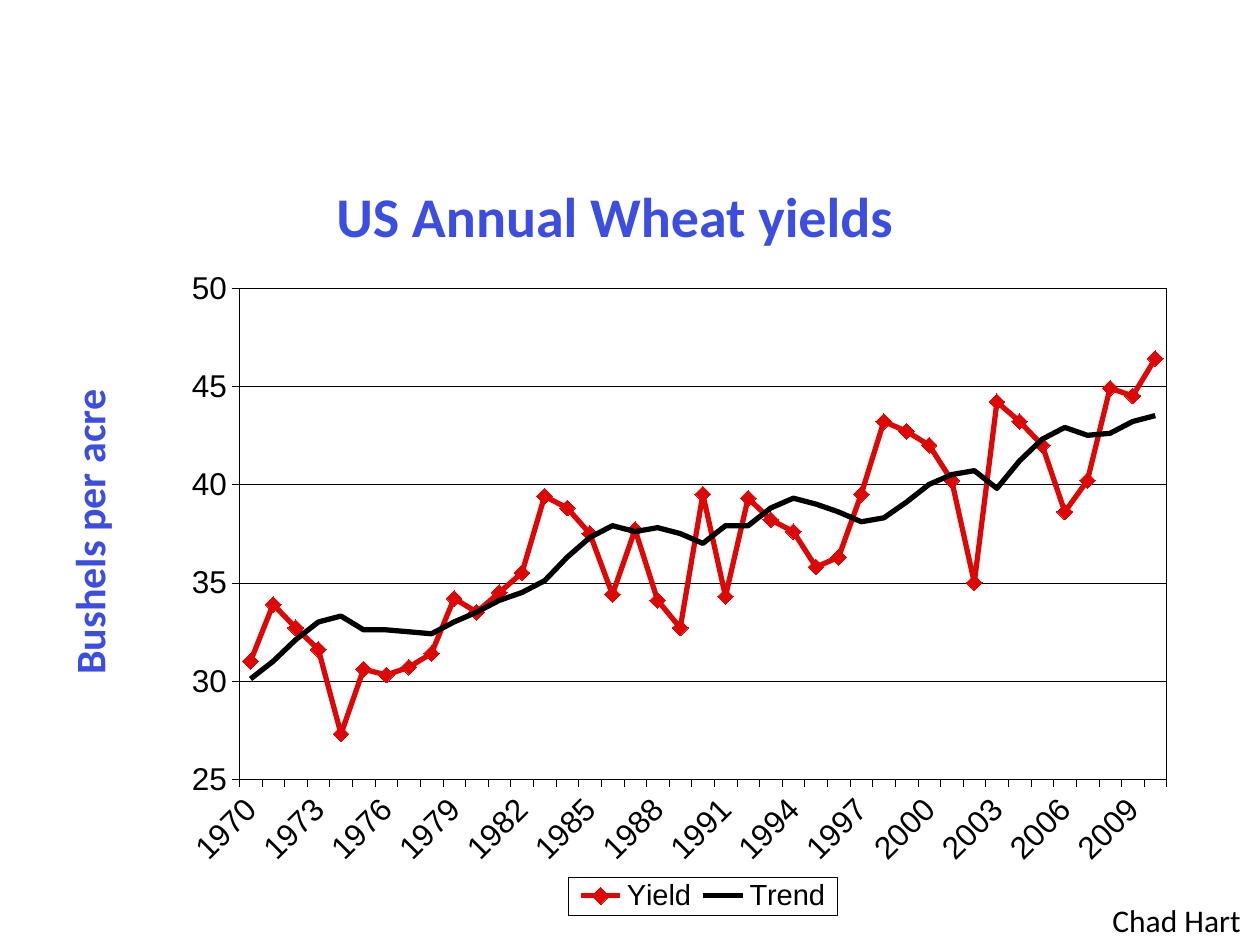
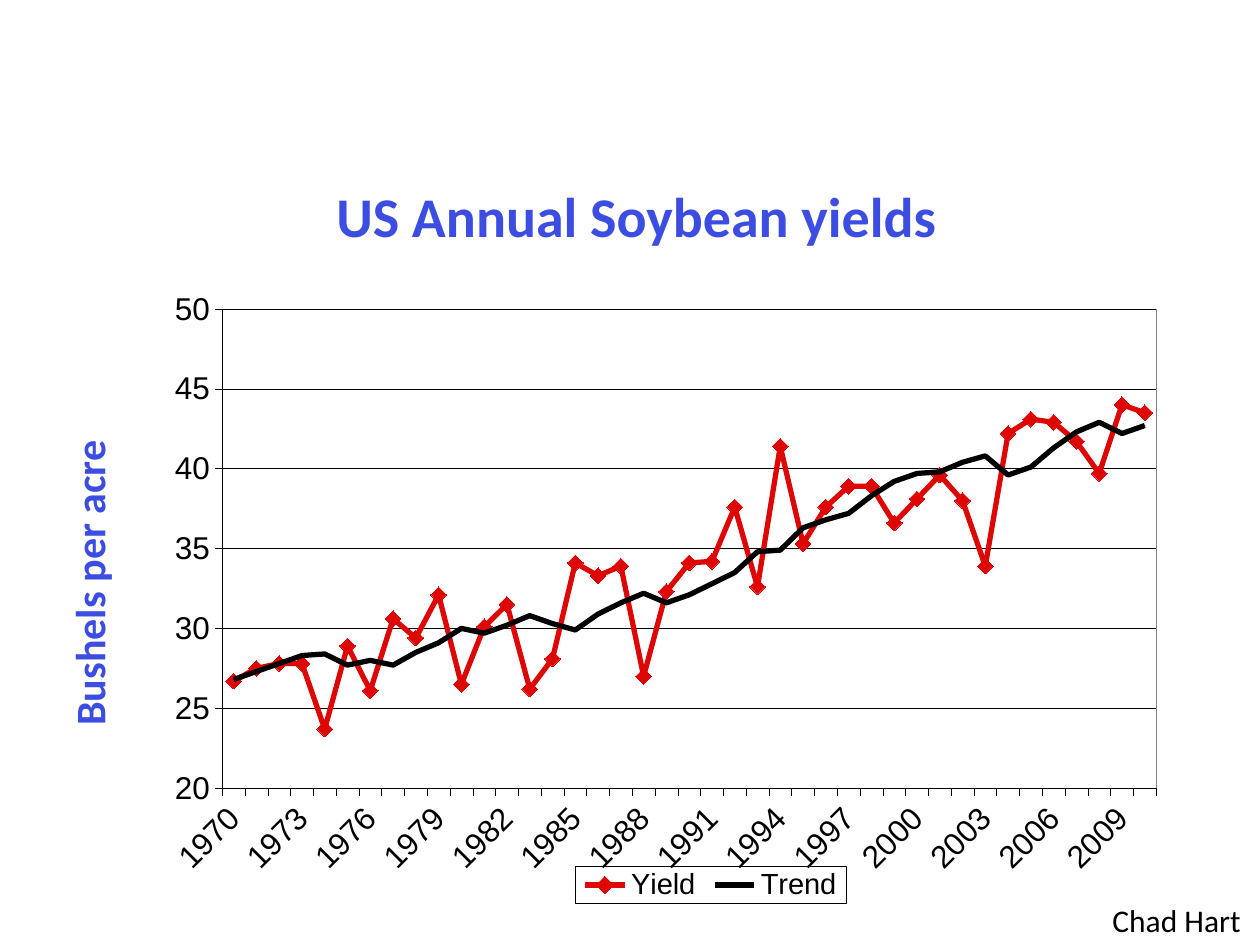
from lxml import etree
from pptx import Presentation
from pptx.chart.data import CategoryChartData
from pptx.dml.color import RGBColor
from pptx.enum.chart import XL_CHART_TYPE as ChartType
from pptx.enum.chart import XL_LEGEND_POSITION as LegendPosition
from pptx.enum.chart import XL_MARKER_STYLE as MarkerStyle
from pptx.enum.chart import XL_TICK_MARK as TickMark
from pptx.enum.text import MSO_ANCHOR, PP_ALIGN
from pptx.oxml import parse_xml
from pptx.oxml.ns import nsdecls, qn
from pptx.util import Pt

# Content
YEARS = [str(year) for year in range(1970, 2011)]
AXIS_CAPTION = "Bushels per acre"
AUTHOR = "Chad Hart"
CROPS = [
    {
        "title": "US Annual Wheat yields",
        "title_width": 336,
        "caption_top": 285,
        "chart_box": (63.4, 146.2, 610.6, 381.6),
        "plot_area": (0.12, 0.048, 0.868, 0.736),
        "minimum": 25,
        "border": "000000",
        "yield": [
            31, 33.9, 32.7, 31.6, 27.3, 30.6, 30.3, 30.7, 31.4, 34.2, 33.5, 34.5, 35.5, 39.4,
            38.8, 37.5, 34.4, 37.7, 34.1, 32.7, 39.5, 34.3, 39.3, 38.2, 37.6, 35.8, 36.3, 39.5,
            43.2, 42.7, 42, 40.2, 35, 44.2, 43.2, 42, 38.6, 40.2, 44.9, 44.5, 46.4],
        "trend": [
            30.1, 31, 32.1, 33, 33.3, 32.6, 32.6, 32.5, 32.4, 33, 33.5, 34.1, 34.5, 35.1,
            36.3, 37.3, 37.9, 37.6, 37.8, 37.5, 37, 37.9, 37.9, 38.8, 39.3, 39, 38.6, 38.1,
            38.3, 39.1, 40, 40.5, 40.7, 39.8, 41.2, 42.3, 42.9, 42.5, 42.6, 43.2, 43.5],
    },
    {
        "title": "US Annual Soybean yields",
        "title_width": 361,
        "caption_top": 314,
        "chart_box": (65.5, 149, 614.9, 372.2),
        "plot_area": (0.1, 0.074, 0.868, 0.736),
        "minimum": 20,
        "border": "808080",
        "yield": [
            26.7, 27.5, 27.8, 27.8, 23.7, 28.9, 26.1, 30.6, 29.4, 32.1, 26.5, 30.1, 31.5, 26.2,
            28.1, 34.1, 33.3, 33.9, 27, 32.3, 34.1, 34.2, 37.6, 32.6, 41.4, 35.3, 37.6, 38.9,
            38.9, 36.6, 38.1, 39.6, 38, 33.9, 42.2, 43.1, 42.9, 41.7, 39.7, 44, 43.5],
        "trend": [
            26.8, 27.3, 27.8, 28.3, 28.4, 27.7, 28, 27.7, 28.5, 29.1, 30, 29.7, 30.2, 30.8,
            30.3, 29.9, 30.9, 31.6, 32.2, 31.6, 32.1, 32.8, 33.5, 34.8, 34.9, 36.3, 36.8, 37.2,
            38.3, 39.2, 39.7, 39.8, 40.4, 40.8, 39.6, 40.1, 41.3, 42.3, 42.9, 42.2, 42.7],
    },
]

# Shared style
BLUE = RGBColor(0x3C, 0x4D, 0xE1)
RED = RGBColor(0xDD, 0x08, 0x06)
BLACK = RGBColor(0x00, 0x00, 0x00)
TEXT_FONT = "Calibri"
CHART_FONT = "Arial"
HAIRLINE = 0.25
LEGEND_AREA = (0.428, 0.93, 0.252, 0.057)


def style_font(font, name, size, color, bold=False):
    font.name = name
    font.size = Pt(size)
    font.bold = bold
    font.color.rgb = color


def style_line(line, color, width):
    line.color.rgb = color
    line.width = Pt(width)


def write_text(shape, box, text, size, color, bold=False):
    shape.left, shape.top, shape.width, shape.height = (Pt(length) for length in box)
    frame = shape.text_frame
    frame.word_wrap = False
    frame.vertical_anchor = MSO_ANCHOR.TOP
    paragraph = frame.paragraphs[0]
    paragraph.alignment = PP_ALIGN.LEFT
    run = paragraph.add_run()
    run.text = text
    style_font(run.font, TEXT_FONT, size, color, bold)


def add_label(slide, box, *style):
    label = slide.shapes.add_textbox(0, 0, 0, 0)
    write_text(label, box, *style)
    return label


def manual_layout(area, inner=False):
    layout = parse_xml(f"<c:layout {nsdecls('c')}><c:manualLayout/></c:layout>")
    settings = [("layoutTarget", "inner")] if inner else []
    settings += [("xMode", "edge"), ("yMode", "edge"), *zip("xywh", area)]
    for tag, value in settings:
        etree.SubElement(layout[0], qn(f"c:{tag}")).set("val", str(value))
    return layout


def border_properties(color):
    return parse_xml(
        f'<c:spPr {nsdecls("c", "a")}><a:noFill/><a:ln w="{Pt(HAIRLINE)}">'
        f'<a:solidFill><a:srgbClr val="{color}"/></a:solidFill></a:ln></c:spPr>')


def remove_layout(element):
    for layout in element.findall(qn("c:layout")):
        element.remove(layout)


def style_axes(chart, minimum):
    for axis in (chart.category_axis, chart.value_axis):
        axis.major_tick_mark = TickMark.OUTSIDE
        axis.minor_tick_mark = TickMark.NONE
        style_font(axis.tick_labels.font, CHART_FONT, 18, BLACK)
        style_line(axis.format.line, BLACK, HAIRLINE)
    values = chart.value_axis
    values.minimum_scale, values.maximum_scale, values.major_unit = minimum, 50, 5
    values.tick_labels.number_format = "0"
    values.tick_labels.number_format_is_linked = False
    values.has_major_gridlines = True
    style_line(values.major_gridlines.format.line, BLACK, HAIRLINE)

    # Every third year, slanted
    years = chart.category_axis._element
    years.find(qn("c:txPr")).find(qn("a:bodyPr")).set("rot", str(-45 * 60000))
    skip = parse_xml(f'<c:tickLblSkip {nsdecls("c")} val="3"/>')
    years.find(qn("c:lblOffset")).addnext(skip)


def style_legend(chart):
    chart.has_legend = True
    legend = chart.legend
    legend.position = LegendPosition.BOTTOM
    legend.include_in_layout = False
    style_font(legend.font, CHART_FONT, 16.6, BLACK)
    element = legend._element
    remove_layout(element)
    element.find(qn("c:legendPos")).addnext(manual_layout(LEGEND_AREA))
    element.find(qn("c:overlay")).addnext(border_properties("000000"))


def add_yield_chart(slide, crop):
    data = CategoryChartData()
    data.categories = YEARS
    data.add_series("Yield", crop["yield"])
    data.add_series("Trend", crop["trend"])
    box = [Pt(length) for length in crop["chart_box"]]
    chart = slide.shapes.add_chart(ChartType.LINE_MARKERS, *box, data).chart
    chart.has_title = False
    style_font(chart.font, CHART_FONT, 18, BLACK)
    style_axes(chart, crop["minimum"])
    style_legend(chart)

    # Yield with diamonds, trend as a plain line
    plot = chart.plots[0]
    plot.vary_by_categories = False
    for series, color in zip(plot.series, (RED, BLACK)):
        series.smooth = False
        style_line(series.format.line, color, 3)
        series.marker.style = MarkerStyle.NONE
    marker = plot.series[0].marker
    marker.style = MarkerStyle.DIAMOND
    marker.size = 9
    marker.format.fill.solid()
    marker.format.fill.fore_color.rgb = RED
    style_line(marker.format.line, RED, HAIRLINE)

    # Plot area place and border
    plot_area = chart._chartSpace.chart.plotArea
    remove_layout(plot_area)
    plot_area.insert(0, manual_layout(crop["plot_area"], inner=True))
    plot_area.append(border_properties(crop["border"]))


def add_crop_slide(presentation, crop):
    slide = presentation.slides.add_slide(presentation.slide_layouts[5])
    write_text(slide.shapes.title, (185, 100, crop["title_width"], 46),
               crop["title"], 32, BLUE, True)
    add_yield_chart(slide, crop)
    caption = add_label(slide, (-39, crop["caption_top"], 179.3, 36),
                        AXIS_CAPTION, 24, BLUE, True)
    caption.rotation = 270
    add_label(slide, (628.6, 511.2, 88.6, 28.8), AUTHOR, 18, BLACK)


def main():
    presentation = Presentation()
    presentation.slide_width, presentation.slide_height = Pt(720), Pt(540)
    for crop in CROPS:
        add_crop_slide(presentation, crop)
    presentation.save("out.pptx")


if __name__ == "__main__":
    main()
